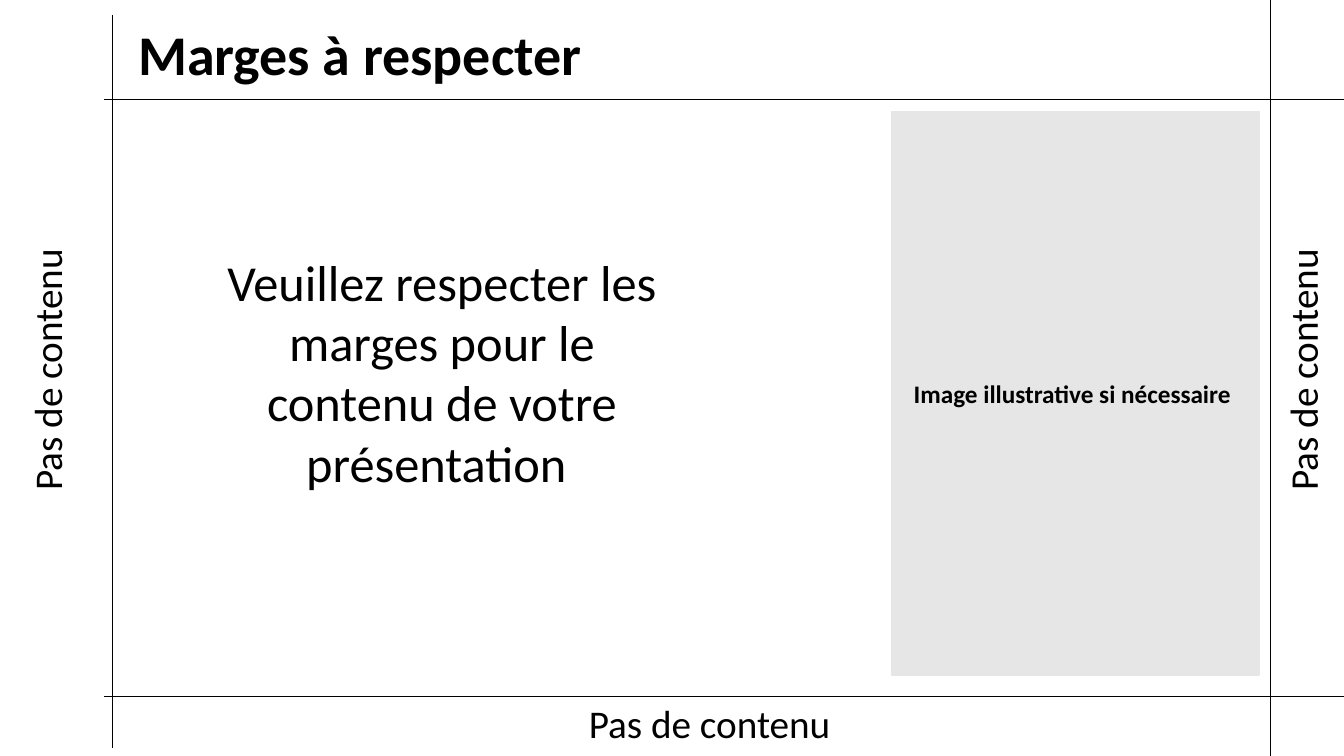
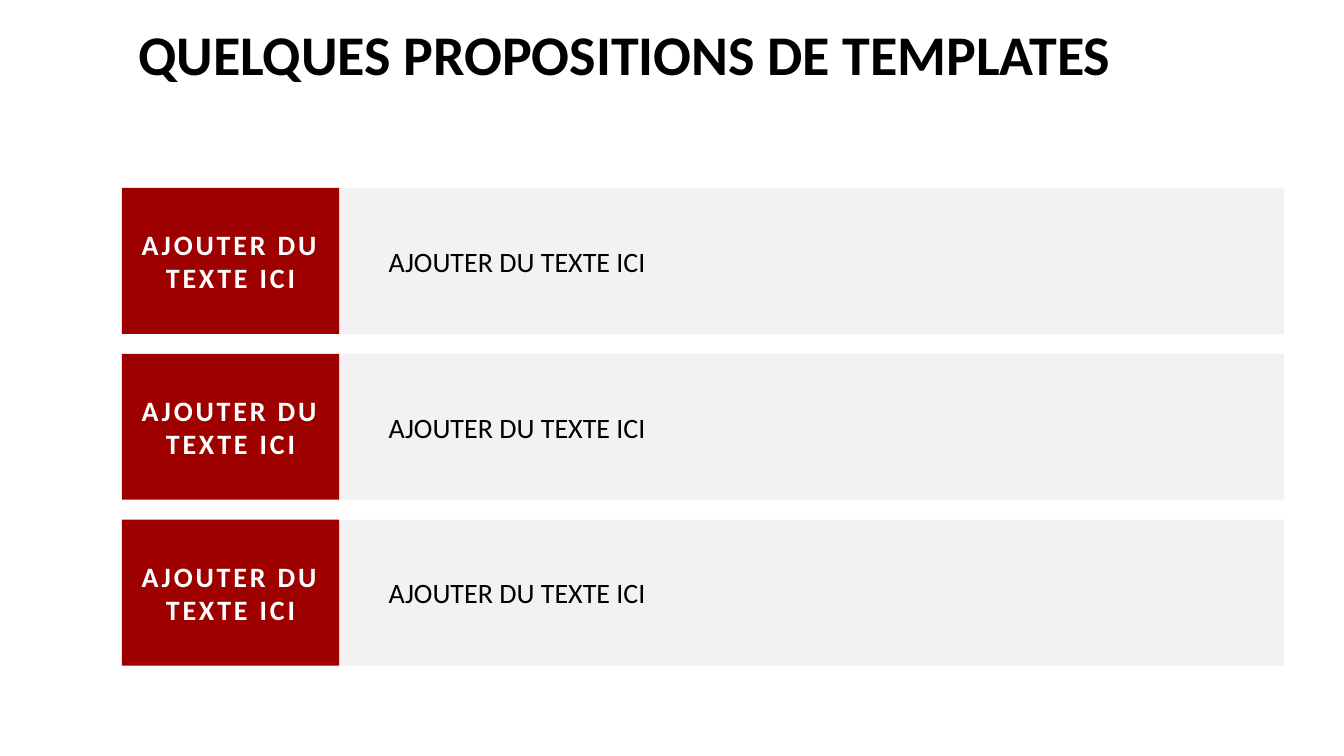
import pptx
import pptx.util
import pptx.dml.color
import pptx.enum.shapes
import pptx.enum.text
import pptx.oxml.ns
import lxml.etree

PX = 9525
BLACK = pptx.dml.color.RGBColor(0x00, 0x00, 0x00)
WHITE = pptx.dml.color.RGBColor(0xFF, 0xFF, 0xFF)
RED = pptx.dml.color.RGBColor(0x9E, 0x00, 0x00)
ROW_GREY = pptx.dml.color.RGBColor(0xF2, 0xF2, 0xF2)
IMAGE_GREY = pptx.dml.color.RGBColor(0xE7, 0xE6, 0xE6)
FONT = "Calibri"

ALIGN = pptx.enum.text.PP_ALIGN
ANCHOR = pptx.enum.text.MSO_ANCHOR

SLIDE_SIZE = (1280, 720)
TITLE_BOX = (122, 14, 1140, 64)

MARGINS_TITLE = "Marges à respecter"
MARGIN_LINES = [
    (107, 14, 107, 712),
    (1210, 0, 1210, 720),
    (1280, 95, 99, 95),
    (1280, 663, 99, 663),
]
NO_CONTENT = "Pas de contenu "
SIDE_LABELS = [(17, 193, 64, 310), (1213, 193, 64, 310)]
BOTTOM_LABEL = (525, 661, 310, 64)
ADVICE = "Veuillez respecter les marges pour le contenu de votre présentation "
ADVICE_BOX = (201, 234, 440, 252)
IMAGE_NOTE = "Image illustrative si nécessaire "
IMAGE_BOX = (849, 106, 350, 537)

TEMPLATES_TITLE = "QUELQUES PROPOSITIONS DE TEMPLATES"
TEMPLATE_ROWS = [("AJOUTER DU TEXTE ICI", "AJOUTER DU TEXTE ICI")] * 3
ROW_LEFT, ROW_TOP, ROW_HEIGHT, ROW_GAP = 116, 179, 139, 19
HEADING_WIDTH, BODY_WIDTH, BODY_INSET = 207, 900, 47


def px(*lengths):
    return [length * PX for length in lengths]


def write(shape, text, size, color=BLACK, bold=False, align=ALIGN.CENTER,
          anchor=ANCHOR.TOP, spacing=None):
    frame = shape.text_frame
    frame.word_wrap = True
    frame.vertical_anchor = anchor
    paragraph = frame.paragraphs[0]
    paragraph.alignment = align
    run = paragraph.add_run()
    run.text = text
    run.font.name = FONT
    run.font.size = pptx.util.Pt(size)
    run.font.bold = bold
    run.font.color.rgb = color
    if spacing:
        run._r.get_or_add_rPr().set("spc", str(spacing * 100))
    return frame


def add_titled_slide(deck, title):
    slide = deck.slides.add_slide(deck.slide_layouts[5])
    heading = slide.shapes.title
    heading.left, heading.top, heading.width, heading.height = px(*TITLE_BOX)
    frame = write(heading, title, 40, bold=True, align=ALIGN.LEFT)
    frame.auto_size = pptx.enum.text.MSO_AUTO_SIZE.NONE
    return slide


def add_block(slide, box, fill):
    block = slide.shapes.add_shape(
        pptx.enum.shapes.MSO_SHAPE.RECTANGLE, *px(*box))
    block.shadow.inherit = False
    block.fill.solid()
    block.fill.fore_color.rgb = fill
    block.line.fill.background()
    return block


def add_margin_line(slide, ends):
    line = slide.shapes.add_connector(
        pptx.enum.shapes.MSO_CONNECTOR.STRAIGHT, *px(*ends))
    line.line.color.rgb = BLACK
    line.line.width = pptx.util.Pt(0.5)
    lxml.etree.SubElement(
        line._element.spPr, pptx.oxml.ns.qn("a:effectLst"))


def build_margins(deck):
    slide = add_titled_slide(deck, MARGINS_TITLE)
    for ends in MARGIN_LINES:
        add_margin_line(slide, ends)
    for box in SIDE_LABELS:
        frame = write(add_block(slide, box, WHITE), NO_CONTENT, 28)
        frame._txBody.bodyPr.set("vert", "vert270")
    for box, text, size in [(BOTTOM_LABEL, NO_CONTENT, 28),
                            (ADVICE_BOX, ADVICE, 36)]:
        write(slide.shapes.add_textbox(*px(*box)), text, size)
    image_area = add_block(slide, IMAGE_BOX, IMAGE_GREY)
    image_area.line.color.rgb = IMAGE_GREY
    image_area.line.width = pptx.util.Pt(1)
    write(image_area, IMAGE_NOTE, 18, bold=True, anchor=ANCHOR.MIDDLE)


def build_templates(deck):
    slide = add_titled_slide(deck, TEMPLATES_TITLE)
    for index, (heading, body) in enumerate(TEMPLATE_ROWS):
        top = ROW_TOP + index * (ROW_HEIGHT + ROW_GAP)
        body_box = (ROW_LEFT + HEADING_WIDTH, top, BODY_WIDTH, ROW_HEIGHT)
        frame = write(add_block(slide, body_box, ROW_GREY), body, 20,
                      align=ALIGN.LEFT, anchor=ANCHOR.MIDDLE)
        frame.margin_left = BODY_INSET * PX
        heading_box = (ROW_LEFT, top, HEADING_WIDTH, ROW_HEIGHT)
        write(add_block(slide, heading_box, RED), heading, 20, WHITE,
              bold=True, anchor=ANCHOR.MIDDLE, spacing=2)


def main():
    deck = pptx.Presentation()
    deck.slide_width, deck.slide_height = px(*SLIDE_SIZE)
    build_margins(deck)
    build_templates(deck)
    deck.save("out.pptx")


if __name__ == "__main__":
    main()
